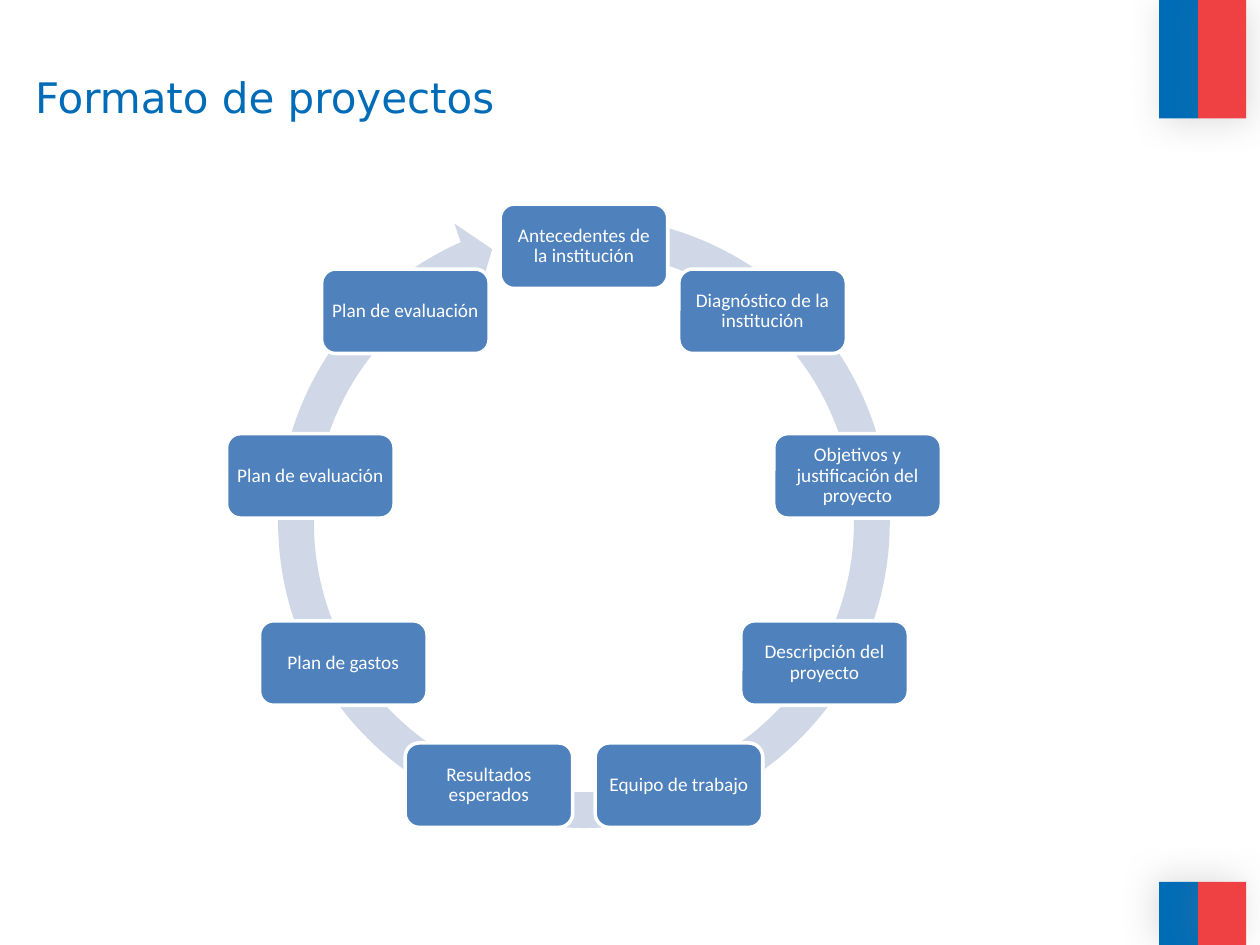
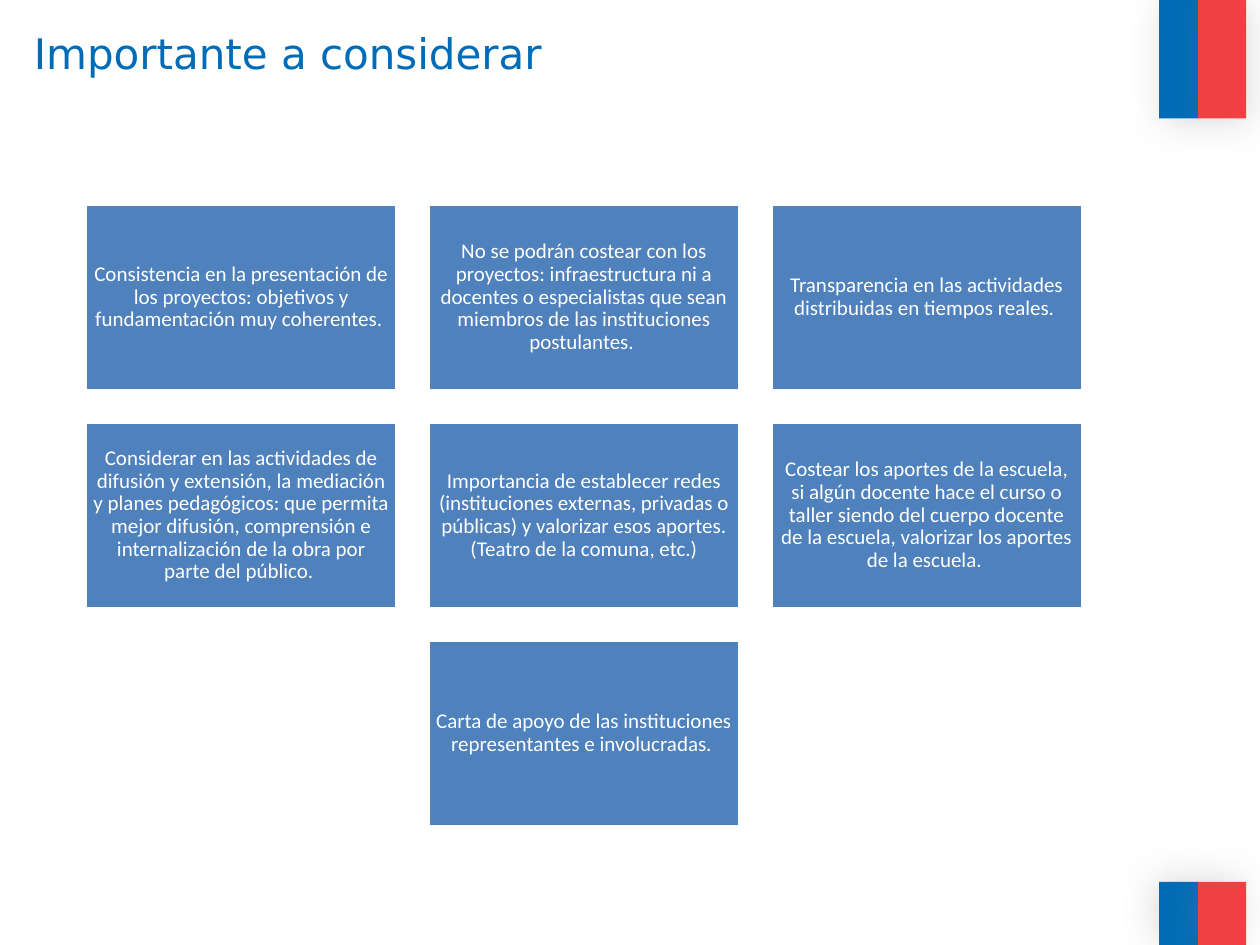
"""Two slides on project proposals: a cycle of sections and a grid of advice."""
import math

from lxml import etree
from pptx import Presentation
from pptx.dml.color import RGBColor
from pptx.enum import shapes, text
from pptx.oxml import ns
from pptx.util import Inches, Pt

SLIDE_WIDTH, SLIDE_HEIGHT = Inches(10), Inches(7.5)
COLUMNS, ROWS = 100, 75
BLUE, RED, BOX, ARROW, WHITE = "006CB7", "EF4144", "4F81BD", "D0D8E8", "FFFFFF"
TITLE_FONT, BODY_FONT = "DejaVu Sans", "Calibri"
RECTANGLE = shapes.MSO_SHAPE.RECTANGLE
ROUNDED = shapes.MSO_SHAPE.ROUNDED_RECTANGLE

SECTIONS = [
    "Antecedentes de la institución",
    "Diagnóstico de la institución",
    "Objetivos y justificación del proyecto",
    "Descripción del proyecto",
    "Equipo de trabajo",
    "Resultados esperados",
    "Plan de gastos",
    "Plan de evaluación",
    "Plan de evaluación",
]
ADVICE = [
    [
        "Consistencia en la presentación de los proyectos: objetivos y "
        "fundamentación muy coherentes. ",
        "No se podrán costear con los proyectos: infraestructura ni a docentes "
        "o especialistas que sean miembros de las instituciones postulantes. ",
        "Transparencia en las actividades distribuidas en tiempos reales. ",
    ],
    [
        "Considerar en las actividades de difusión y extensión, la mediación y "
        "planes pedagógicos: que permita mejor difusión, comprensión e "
        "internalización de la obra por parte del público. ",
        "Importancia de establecer redes (instituciones externas, privadas o "
        "públicas) y valorizar esos aportes. (Teatro de la comuna, etc.)",
        "Costear los aportes de la escuela, si algún docente hace el curso o "
        "taller siendo del cuerpo docente de la escuela, valorizar los aportes "
        "de la escuela. ",
    ],
    ["Carta de apoyo de las instituciones representantes e involucradas. "],
]


def color(value):
    """Turn a hex string into a colour."""
    return RGBColor.from_string(value)


def place(left, top, width, height):
    """Turn grid columns and rows into slide lengths."""
    column, row = SLIDE_WIDTH / COLUMNS, SLIDE_HEIGHT / ROWS
    return [round(n) for n in (left * column, top * row, width * column, height * row)]


def style_font(para, name, size, value):
    """Set the font of a whole paragraph."""
    para.font.name = name
    para.font.size = Pt(size)
    para.font.color.rgb = color(value)


def add_plain(page, kind, area, fill):
    """Add a filled shape with no outline and no shadow."""
    shape = page.shapes.add_shape(kind, *place(*area))
    shape.shadow.inherit = False
    shape.fill.solid()
    shape.fill.fore_color.rgb = color(fill)
    shape.line.fill.background()
    return shape


def add_soft_shadow(shape, angle):
    """Give a shape a wide grey shadow cast at an angle in degrees."""
    effects = shape._element.spPr.find(ns.qn("a:effectLst"))
    shadow = etree.SubElement(
        effects, ns.qn("a:outerShdw"), blurRad=str(Pt(20)), dist=str(Pt(3)),
        dir=str(angle * 60000), algn="ctr", rotWithShape="0")
    tint = etree.SubElement(shadow, ns.qn("a:srgbClr"), val="808080")
    etree.SubElement(tint, ns.qn("a:alpha"), val="25000")


def add_flag(page, top, height, angle):
    """Add a blue and red band at the right edge."""
    for left, width, fill in ((92, 3.1, BLUE), (95.1, 3.8, RED)):
        band = add_plain(page, RECTANGLE, (left, top, width, height), fill)
        add_soft_shadow(band, angle)


def add_title(page, title, left, top):
    """Add the slide title."""
    box = page.shapes.add_textbox(*place(left, top, 89.3, 12.5))
    box.text_frame.word_wrap = True
    para = box.text_frame.paragraphs[0]
    para.text = title
    style_font(para, TITLE_FONT, 24, BLUE)


def add_label(page, kind, area, words, size):
    """Add a blue box with a white outline and centred words."""
    box = add_plain(page, kind, area, BOX)
    box.line.color.rgb = color(WHITE)
    box.line.width = Pt(2)
    frame = box.text_frame
    frame.word_wrap = True
    frame.vertical_anchor = text.MSO_ANCHOR.MIDDLE
    frame.margin_left = frame.margin_right = Inches(0.05)
    frame.margin_top = frame.margin_bottom = Inches(0.05)
    para = frame.paragraphs[0]
    para.text = words
    para.alignment = text.PP_ALIGN.CENTER
    para.line_spacing = 0.9
    style_font(para, BODY_FONT, size, WHITE)


def add_cycle(page, sections):
    """Arrange the sections clockwise on a circular arrow."""
    center_x, center_y, radius = 46.35, 41.6, 22.05
    width, height, arrow_size = 13.3, 6.7, 51.7
    ring = add_plain(page, shapes.MSO_SHAPE.CIRCULAR_ARROW,
                     (20.5, 15.6, arrow_size, arrow_size), ARROW)
    for index, value in enumerate((0.055, 3.307, 147.548, 168.146, 0.058)):
        ring.adjustments[index] = value
    for index, words in enumerate(sections):
        angle = math.tau * index / len(sections)
        left = center_x + radius * math.sin(angle) - width / 2
        top = center_y - radius * math.cos(angle) - height / 2
        add_label(page, ROUNDED, (left, top, width, height), words, 11)


def add_advice(page, rows):
    """Lay out rows of boxes, with short rows centred."""
    width, height, gap = 24.7, 14.8, 2.5
    widest = max(len(row) for row in rows)
    for line, row in enumerate(rows):
        indent = (widest - len(row)) / 2
        for column, words in enumerate(row):
            left = 6.8 + (column + indent) * (width + gap)
            top = 16.2 + line * (height + gap)
            add_label(page, RECTANGLE, (left, top, width, height), words, 12)


def add_page(deck, title, left, top):
    """Add a slide with the shared bands and a title."""
    page = deck.slides.add_slide(deck.slide_layouts[6])
    add_flag(page, 0, 9.4, 45)
    add_flag(page, 70, 5, 215)
    add_title(page, title, left, top)
    return page


def main():
    """Build and save the deck."""
    deck = Presentation()
    deck.slide_width, deck.slide_height = SLIDE_WIDTH, SLIDE_HEIGHT
    add_cycle(add_page(deck, "Formato de proyectos", 1.8, 5.2), SECTIONS)
    add_advice(add_page(deck, "Importante a considerar", 1.7, 1.7), ADVICE)
    deck.save("out.pptx")


if __name__ == "__main__":
    main()
